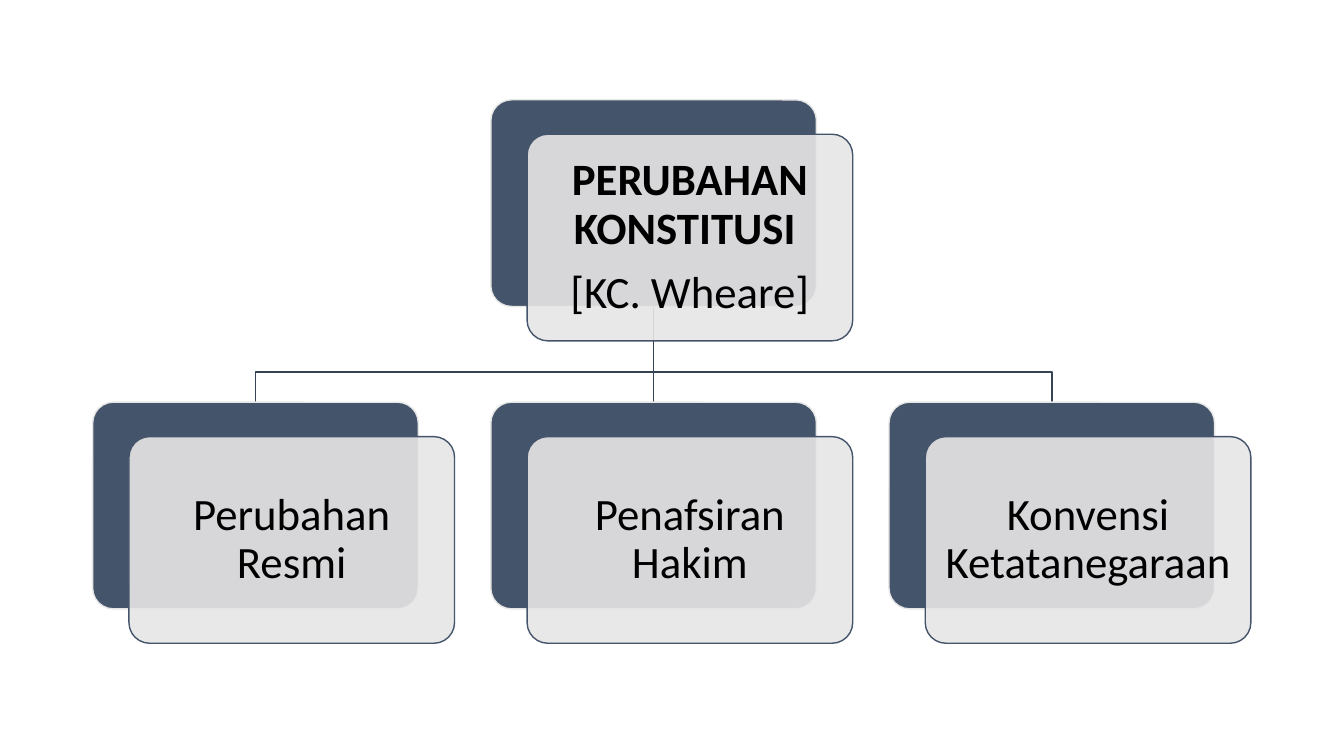
from dataclasses import dataclass

from lxml.etree import SubElement
from pptx import Presentation
from pptx.dml.color import RGBColor
from pptx.enum.shapes import MSO_CONNECTOR, MSO_SHAPE
from pptx.enum.text import MSO_ANCHOR, PP_ALIGN
from pptx.oxml.ns import qn
from pptx.util import Pt


@dataclass(frozen=True)
class Theme:
    font: str = "Calibri"
    size: float = 32
    line_width: float = 1
    text: str = "000000"
    navy: str = "44546A"
    pale: str = "E7E6E6"
    link: str = "364355"
    pale_alpha: int = 90000


CARD_W, CARD_H = 232.56, 147.6
SHIFT_X, SHIFT_Y = 25.92, 24.6
LEFT, PITCH = 66.24, 284.4
ROOT_Y, CHILD_Y, BUS_Y = 71.28, 287.28, 265.7
ROOT = [("PERUBAHAN KONSTITUSI ", True), ("[KC. Wheare]", False)]
CHILDREN = ["Perubahan Resmi", "Penafsiran Hakim", "Konvensi Ketatanegaraan"]


class Chart:
    """Draws the cards and links of a hierarchy on one slide."""

    def __init__(self, slide, theme):
        self.s = slide
        self.theme = theme

    def stroke(self, line, color):
        line.color.rgb = RGBColor.from_string(color)
        line.width = Pt(self.theme.line_width)

    def elbow(self, x1, y1, bus_y, x2, y2):
        points = [(Pt(x), Pt(y)) for x, y in ((x1, bus_y), (x2, bus_y), (x2, y2))]
        builder = self.s.shapes.build_freeform(Pt(x1), Pt(y1))
        builder.add_line_segments(points, close=False)
        sp = builder.convert_to_shape()
        sp.shadow.inherit = False
        sp.fill.background()
        self.stroke(sp.line, self.theme.link)

    def straight(self, x, y1, y2):
        cxn = self.s.shapes.add_connector(
            MSO_CONNECTOR.STRAIGHT, Pt(x), Pt(y1), Pt(x), Pt(y2))
        self.stroke(cxn.line, self.theme.link)
        SubElement(cxn.element.spPr, qn("a:effectLst"))
        return cxn

    def panel(self, x, y, fill, line):
        sp = self.s.shapes.add_shape(
            MSO_SHAPE.ROUNDED_RECTANGLE, Pt(x), Pt(y), Pt(CARD_W), Pt(CARD_H))
        sp.adjustments[0] = 0.1
        sp.shadow.inherit = False
        sp.fill.solid()
        sp.fill.fore_color.rgb = RGBColor.from_string(fill)
        self.stroke(sp.line, line)
        return sp

    def label(self, sp, lines):
        tf = sp.text_frame
        tf.word_wrap = True
        tf.vertical_anchor = MSO_ANCHOR.MIDDLE
        tf.margin_left = tf.margin_right = tf.margin_top = tf.margin_bottom = Pt(9)
        for i, (text, bold) in enumerate(lines):
            p = tf.add_paragraph() if i else tf.paragraphs[0]
            p.alignment = PP_ALIGN.CENTER
            p.line_spacing = 0.9
            p.space_after = Pt(11)
            r = p.add_run()
            r.text = text
            r.font.name = self.theme.font
            r.font.size = Pt(self.theme.size)
            r.font.bold = bold
            r.font.color.rgb = RGBColor.from_string(self.theme.text)

    def card(self, x, y, lines):
        t = self.theme
        back = self.panel(x, y, t.navy, t.pale)
        front = self.panel(x + SHIFT_X, y + SHIFT_Y, t.pale, t.navy)
        color = front.element.spPr.find(qn("a:solidFill")).find(qn("a:srgbClr"))
        SubElement(color, qn("a:alpha"), val=str(t.pale_alpha))
        self.label(front, lines)
        return back


def main():
    prs = Presentation()
    prs.slide_width, prs.slide_height = Pt(960), Pt(540)
    chart = Chart(prs.slides.add_slide(prs.slide_layouts[6]), Theme())

    lefts = [LEFT + i * PITCH for i in range(len(CHILDREN))]
    first, middle, last = [x + CARD_W / 2 for x in lefts]
    root_bottom = ROOT_Y + CARD_H
    chart.elbow(middle, root_bottom, BUS_Y, last, CHILD_Y)
    trunk = chart.straight(middle, root_bottom, CHILD_Y)
    chart.elbow(middle, root_bottom, BUS_Y, first, CHILD_Y)

    root = chart.card(lefts[1], ROOT_Y, ROOT)
    cards = [chart.card(x, CHILD_Y, [(text, False)]) for x, text in zip(lefts, CHILDREN)]
    trunk.begin_connect(root, 2)
    trunk.end_connect(cards[1], 0)
    prs.save("out.pptx")


if __name__ == "__main__":
    main()
